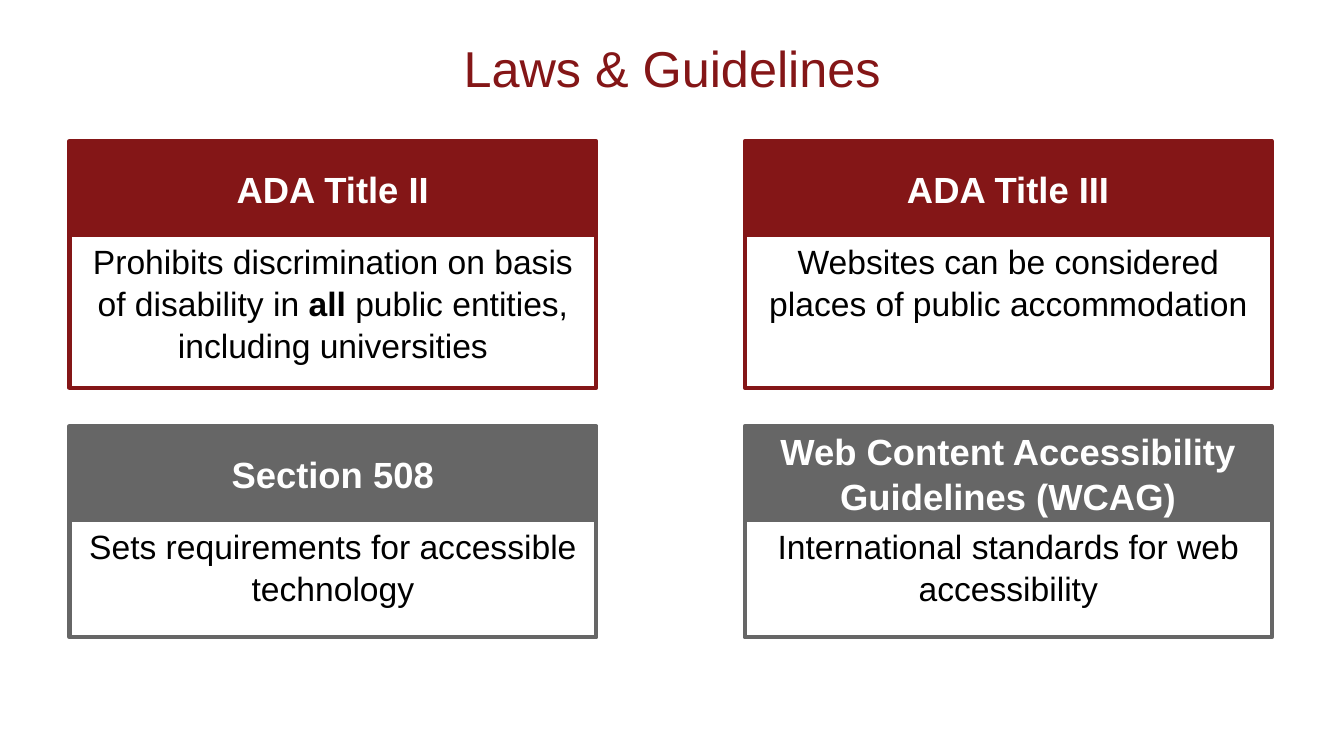
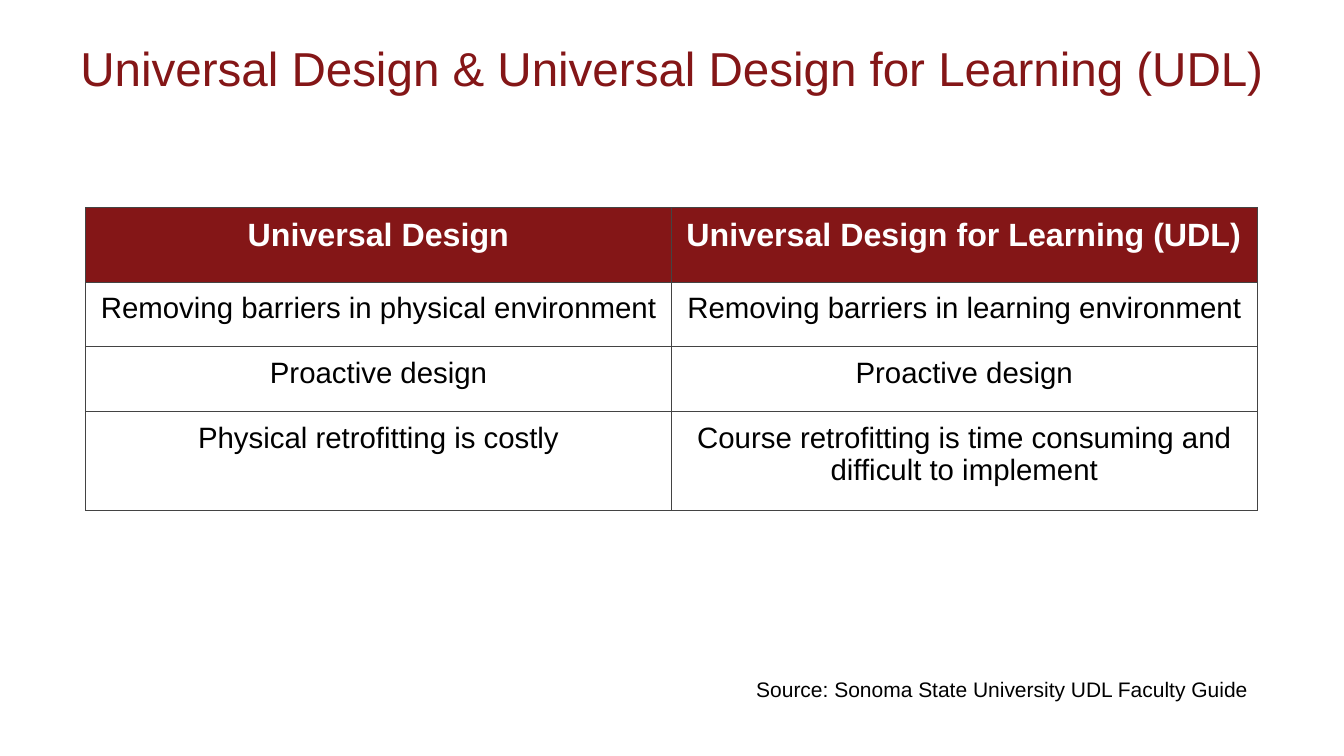
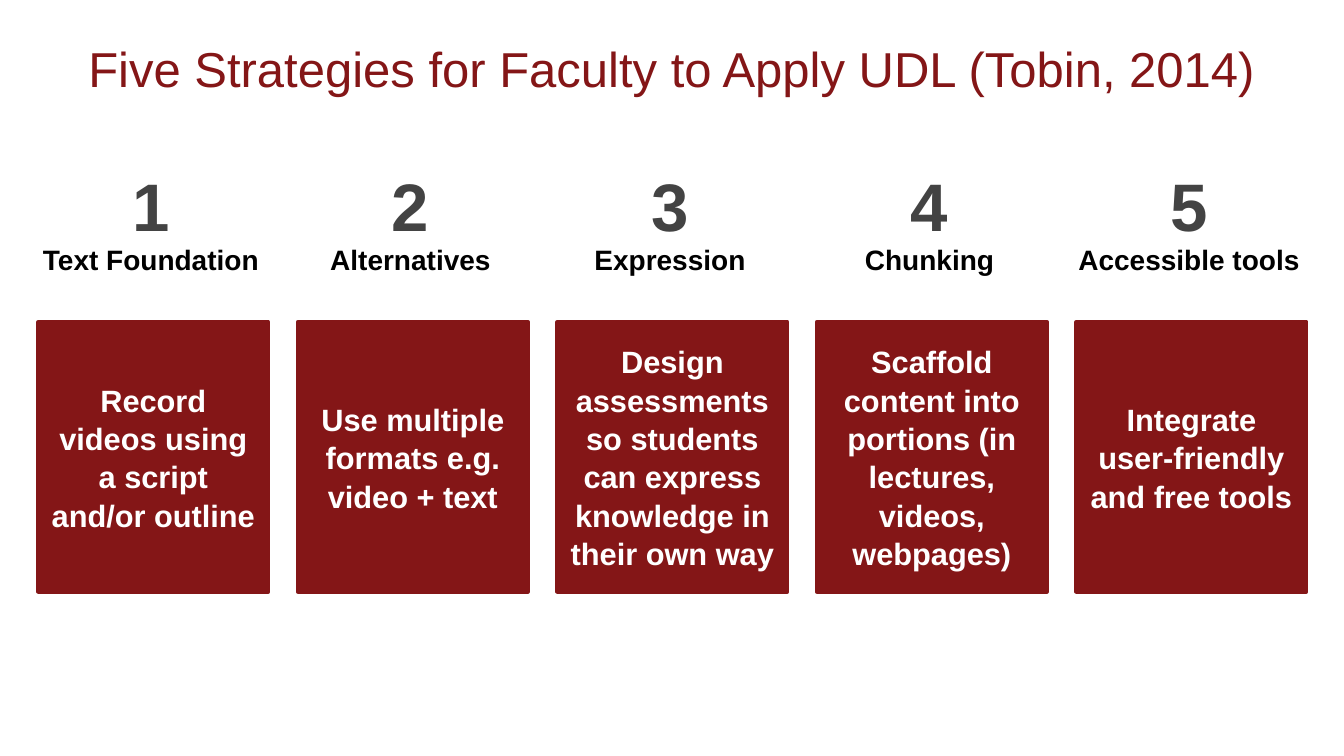
from dataclasses import dataclass

from lxml import etree
from pptx import Presentation
from pptx.dml.color import RGBColor
from pptx.enum import shapes, text
from pptx.oxml.ns import qn
from pptx.util import Cm, Pt


@dataclass(frozen=True)
class Theme:
    font: str = "Arial"
    crimson: str = "841617"
    gray: str = "666666"
    dark: str = "434343"
    black: str = "000000"
    white: str = "FFFFFF"
    title: int = 36
    card_header: int = 26
    card_body: int = 24
    table_header: int = 23
    table_body: int = 21
    source: int = 15
    number: int = 48
    label: int = 20
    strategy: int = 22
    outline: int = 3
    border: float = 0.75
    inset: float = 0.25
    slim_inset: float = 0.13
    panel_spacing: float = 1.04


THEME = Theme()
ALIGN = text.PP_ALIGN
ANCHOR = text.MSO_ANCHOR


def color(value):
    return RGBColor.from_string(value)


def write(frame, content, *, size, ink=THEME.black, bold=False,
          align=ALIGN.CENTER, spacing=None):
    """Write a string, or a list of (string, bold) runs, as one paragraph."""
    paragraph = frame.paragraphs[0]
    paragraph.alignment = align
    if spacing:
        paragraph.line_spacing = spacing
    runs = [(content, bold)] if isinstance(content, str) else content
    for words, is_bold in runs:
        run = paragraph.add_run()
        run.text = words
        run.font.name = THEME.font
        run.font.size = Pt(size)
        run.font.bold = is_bold
        run.font.color.rgb = color(ink)


def set_frame(frame, anchor=ANCHOR.TOP, vertical_inset=THEME.inset):
    frame.word_wrap = True
    frame.auto_size = text.MSO_AUTO_SIZE.NONE
    frame.vertical_anchor = anchor
    frame.margin_left = frame.margin_right = Cm(THEME.inset)
    frame.margin_top = frame.margin_bottom = Cm(vertical_inset)


def add_text(slide, box, content, **style):
    frame = slide.shapes.add_textbox(*map(Cm, box)).text_frame
    set_frame(frame)
    write(frame, content, **style)


def add_panel(slide, box, content, *, fill, line, anchor=ANCHOR.MIDDLE,
              vertical_inset=THEME.inset, **style):
    shape = slide.shapes.add_shape(shapes.MSO_SHAPE.RECTANGLE, *map(Cm, box))
    shape.shadow.inherit = False
    shape.fill.solid()
    shape.fill.fore_color.rgb = color(fill)
    shape.line.color.rgb = color(line)
    shape.line.width = Pt(THEME.outline)
    set_frame(shape.text_frame, anchor, vertical_inset)
    write(shape.text_frame, content, spacing=THEME.panel_spacing, **style)


def add_titled_slide(presentation, title, size=THEME.title):
    slide = presentation.slides.add_slide(presentation.slide_layouts[5])
    shape = slide.shapes.title
    shape.left, shape.top, shape.width, shape.height = map(Cm, (1.7, 0.76, 30.48, 1.88))
    set_frame(shape.text_frame, ANCHOR.MIDDLE, THEME.slim_inset)
    write(shape.text_frame, title, size=size, ink=THEME.crimson)
    return slide


# Laws: a grid of cards
def add_card(slide, box, heading, body, accent):
    left, top, width, height = box
    header_height = 2.35
    add_panel(slide, (left, top + header_height, width, height - header_height), body,
              fill=THEME.white, line=accent, anchor=ANCHOR.TOP,
              vertical_inset=THEME.slim_inset, size=THEME.card_body)
    add_panel(slide, (left, top, width, header_height), heading, fill=accent, line=accent,
              size=THEME.card_header, ink=THEME.white, bold=True)


def build_laws(presentation):
    slide = add_titled_slide(presentation, "Laws & Guidelines")
    card_rows = [
        (3.56, 6.21, THEME.crimson, [
            ("ADA Title II", [("Prohibits discrimination on basis of disability in ", False),
                              ("all", True),
                              (" public entities, including universities", False)]),
            ("ADA Title III", "Websites can be considered places of public accommodation"),
        ]),
        (10.74, 5.32, THEME.gray, [
            ("Section 508", "Sets requirements for accessible technology"),
            ("Web Content Accessibility Guidelines (WCAG)",
             "International standards for web accessibility"),
        ]),
    ]
    for top, height, accent, cards in card_rows:
        for column, (heading, body) in enumerate(cards):
            add_card(slide, (1.75 + column * 17.02, top, 13.28, height), heading, body, accent)


# Universal design: a comparison table
def set_borders(cell):
    properties = cell._tc.get_or_add_tcPr()
    for index, side in enumerate(("a:lnL", "a:lnR", "a:lnT", "a:lnB")):
        line = etree.Element(qn(side), w=str(Pt(THEME.border)))
        fill = etree.SubElement(line, qn("a:solidFill"))
        etree.SubElement(fill, qn("a:srgbClr"), val=THEME.dark)
        properties.insert(index, line)


def add_comparison(slide, box, rows, row_heights):
    table = slide.shapes.add_table(len(rows), len(rows[0]), *map(Cm, box)).table
    for row_index, (row, height) in enumerate(zip(rows, row_heights)):
        table.rows[row_index].height = Cm(height)
        is_header = row_index == 0
        for column_index, content in enumerate(row):
            cell = table.cell(row_index, column_index)
            cell.fill.solid()
            cell.fill.fore_color.rgb = color(THEME.crimson if is_header else THEME.white)
            cell.margin_left = cell.margin_right = Cm(THEME.inset)
            cell.margin_top = cell.margin_bottom = Cm(THEME.inset)
            set_borders(cell)
            write(cell.text_frame, content, bold=is_header,
                  size=THEME.table_header if is_header else THEME.table_body,
                  ink=THEME.white if is_header else THEME.black)


def build_universal_design(presentation):
    slide = add_titled_slide(
        presentation, "Universal Design & Universal Design for Learning (UDL)", size=34)
    rows = [
        ("Universal Design", "Universal Design for Learning (UDL)"),
        ("Removing barriers in physical environment",
         "Removing barriers in learning environment"),
        ("Proactive design", "Proactive design"),
        ("Physical retrofitting is costly",
         "Course retrofitting is time consuming and difficult to implement"),
    ]
    row_heights = (1.88, 1.63, 1.63, 2.49)
    add_comparison(slide, (2.16, 5.23, 29.52, sum(row_heights)), rows, row_heights)
    add_text(slide, (17.55, 16.79, 14.15, 1.14),
             "Source: Sonoma State University UDL Faculty Guide",
             size=THEME.source, align=ALIGN.RIGHT)


# Strategies: numbered columns
def add_strategy(slide, box, number, label, advice):
    left, top, width, height = box
    label_width, label_top, panel_top = 6.35, 1.96, 4.22
    heading_center = left + width / 2 - 0.06
    add_text(slide, (heading_center - 1.95, top, 3.9, 2.57), str(number),
             size=THEME.number, ink=THEME.dark, bold=True)
    add_text(slide, (heading_center - label_width / 2, top + label_top, label_width, 1.37),
             label, size=THEME.label, bold=True)
    add_panel(slide, (left, top + panel_top, width, height - panel_top), advice,
              fill=THEME.crimson, line=THEME.crimson,
              size=THEME.strategy, ink=THEME.white, bold=True)


def build_strategies(presentation):
    slide = add_titled_slide(
        presentation, "Five Strategies for Faculty to Apply UDL (Tobin, 2014)", size=35)
    strategies = [
        ("Text Foundation", "Record videos using a script and/or outline"),
        ("Alternatives", "Use multiple formats e.g. video + text"),
        ("Expression", "Design assessments so students can express knowledge in their own way"),
        ("Chunking", "Scaffold content into portions (in lectures, videos, webpages)"),
        ("Accessible tools", "Integrate user-friendly and free tools"),
    ]
    for index, (label, advice) in enumerate(strategies):
        add_strategy(slide, (0.97 + index * 6.54, 3.89, 5.79, 11.02), index + 1, label, advice)


def main():
    presentation = Presentation()
    presentation.slide_width, presentation.slide_height = Cm(33.87), Cm(19.05)
    build_laws(presentation)
    build_universal_design(presentation)
    build_strategies(presentation)
    presentation.save("out.pptx")


if __name__ == "__main__":
    main()
